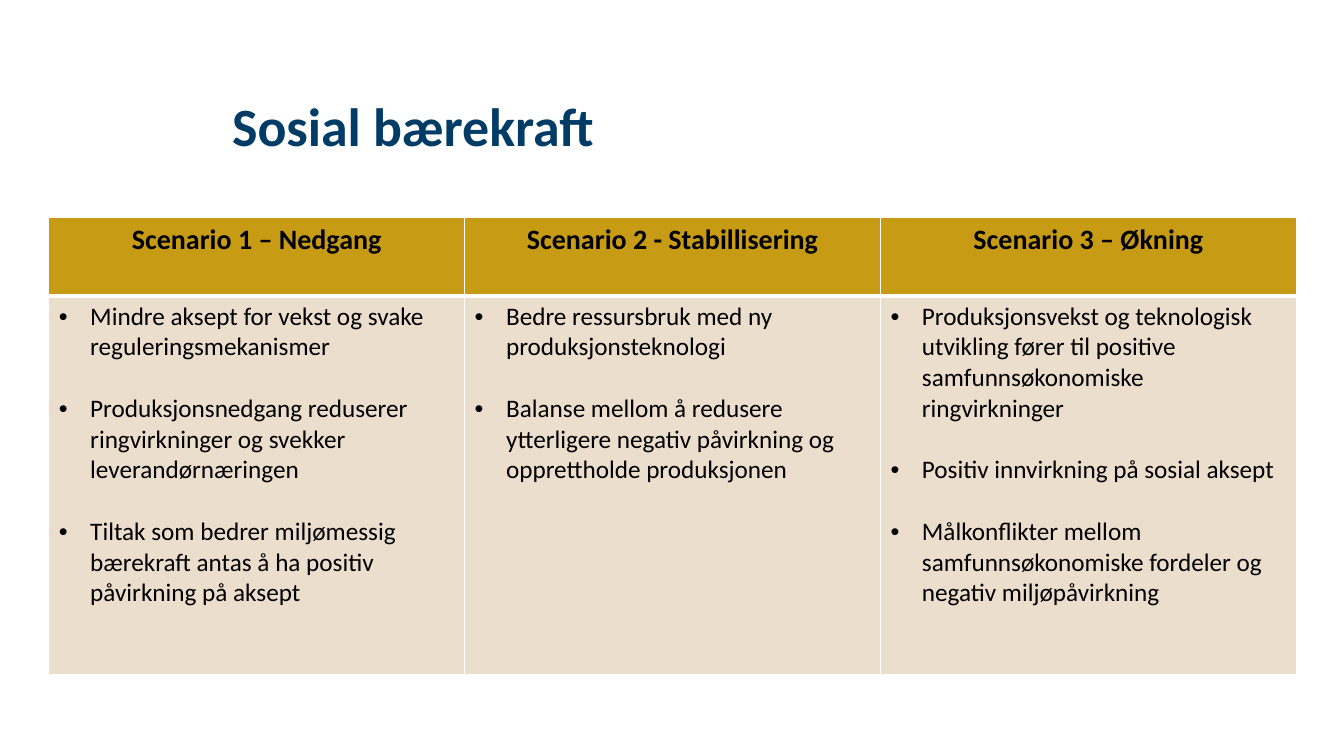
from lxml.etree import SubElement
from pptx import Presentation
from pptx.dml.color import RGBColor
from pptx.enum.text import MSO_ANCHOR as Anchor, PP_ALIGN as Align
from pptx.oxml.ns import qn
from pptx.util import Cm, Pt

NAVY = RGBColor(0x00, 0x3C, 0x65)
GOLD = RGBColor(0xC8, 0x9B, 0x14)
SAND = RGBColor(0xEB, 0xDE, 0xCC)
BLACK = RGBColor(0x00, 0x00, 0x00)
WHITE = RGBColor(0xFF, 0xFF, 0xFF)

SCENARIOS = {
    "Scenario 1 – Nedgang": [
        "Mindre aksept for vekst og svake reguleringsmekanismer",
        "Produksjonsnedgang reduserer ringvirkninger og svekker leverandørnæringen",
        "Tiltak som bedrer miljømessig bærekraft antas å ha positiv påvirkning på aksept",
    ],
    "Scenario 2 - Stabillisering": [
        "Bedre ressursbruk med ny produksjonsteknologi",
        "Balanse mellom å redusere ytterligere negativ påvirkning og opprettholde produksjonen",
    ],
    "Scenario 3 – Økning": [
        "Produksjonsvekst og teknologisk utvikling fører til positive "
        "samfunnsøkonomiske ringvirkninger",
        "Positiv innvirkning på sosial aksept",
        "Målkonflikter mellom samfunnsøkonomiske fordeler og negativ miljøpåvirkning",
    ],
}


def add_bullet(para, indent=Cm(0.79)):
    props = para._p.get_or_add_pPr()
    props.set("marL", str(indent))
    props.set("indent", str(-indent))
    SubElement(props, qn("a:buFont"), typeface="Arial")
    SubElement(props, qn("a:buChar"), char="•")


def write(frame, *lines, size=18, color=BLACK, bold=False, align=Align.LEFT,
          bullet=False, gap=0, spacing=None):
    """Fill a text frame with one paragraph per line, gap points apart."""
    for i, line in enumerate(lines):
        para = frame.add_paragraph() if i else frame.paragraphs[0]
        para.alignment = align
        if spacing:
            para.line_spacing = spacing
        if i and gap:
            para.space_before = Pt(gap)
        if bullet:
            add_bullet(para)
        run = para.add_run()
        run.text = line
        font = run.font
        font.name, font.size, font.bold = "Calibri", Pt(size), bold
        font.color.rgb = color


class Deck:
    def __init__(self):
        self.show = Presentation()
        self.show.slide_width, self.show.slide_height = Cm(33.87), Cm(19.05)
        self.slide = self.show.slides.add_slide(self.show.slide_layouts[6])

    def title(self, text, left, top, width, height):
        box = self.slide.shapes.add_textbox(left, top, width, height)
        frame = box.text_frame
        frame.word_wrap = True
        frame.vertical_anchor = Anchor.BOTTOM
        frame.margin_left = frame.margin_right = 0
        frame.margin_top = frame.margin_bottom = 0
        write(frame, text, size=38.5, color=NAVY, bold=True, spacing=0.9)

    def border(self, cell, **widths):
        """Draw white cell borders; widths in points by side, 1 by default."""
        props = cell._tc.get_or_add_tcPr()
        for side in "LRTB":
            line = SubElement(props, qn(f"a:ln{side}"), w=str(Pt(widths.get(side, 1))))
            fill = SubElement(line, qn("a:solidFill"))
            SubElement(fill, qn("a:srgbClr"), val=str(WHITE))

    def paint(self, cell, color):
        cell.fill.solid()
        cell.fill.fore_color.rgb = color

    def table(self, columns, left, top, width, heights):
        grid = self.slide.shapes.add_table(
            len(heights), len(columns), left, top, width, sum(heights)).table
        grid.horz_banding = False
        for row, height in zip(grid.rows, heights):
            row.height = height
        for i, (name, points) in enumerate(columns.items()):
            head, body = grid.cell(0, i), grid.cell(1, i)
            self.border(head, B=3)
            self.border(body, T=3)
            self.paint(head, GOLD)
            self.paint(body, SAND)
            write(head.text_frame, name, size=20, bold=True, align=Align.CENTER)
            write(body.text_frame, *points, bullet=True, gap=22)


def main():
    deck = Deck()
    deck.title("Sosial bærekraft", Cm(5.85), Cm(1.07), Cm(26.14), Cm(2.92))
    deck.table(SCENARIOS, Cm(1.23), Cm(5.49), Cm(31.44), [Cm(1.97), Cm(9.55)])
    deck.show.save("out.pptx")


if __name__ == "__main__":
    main()
